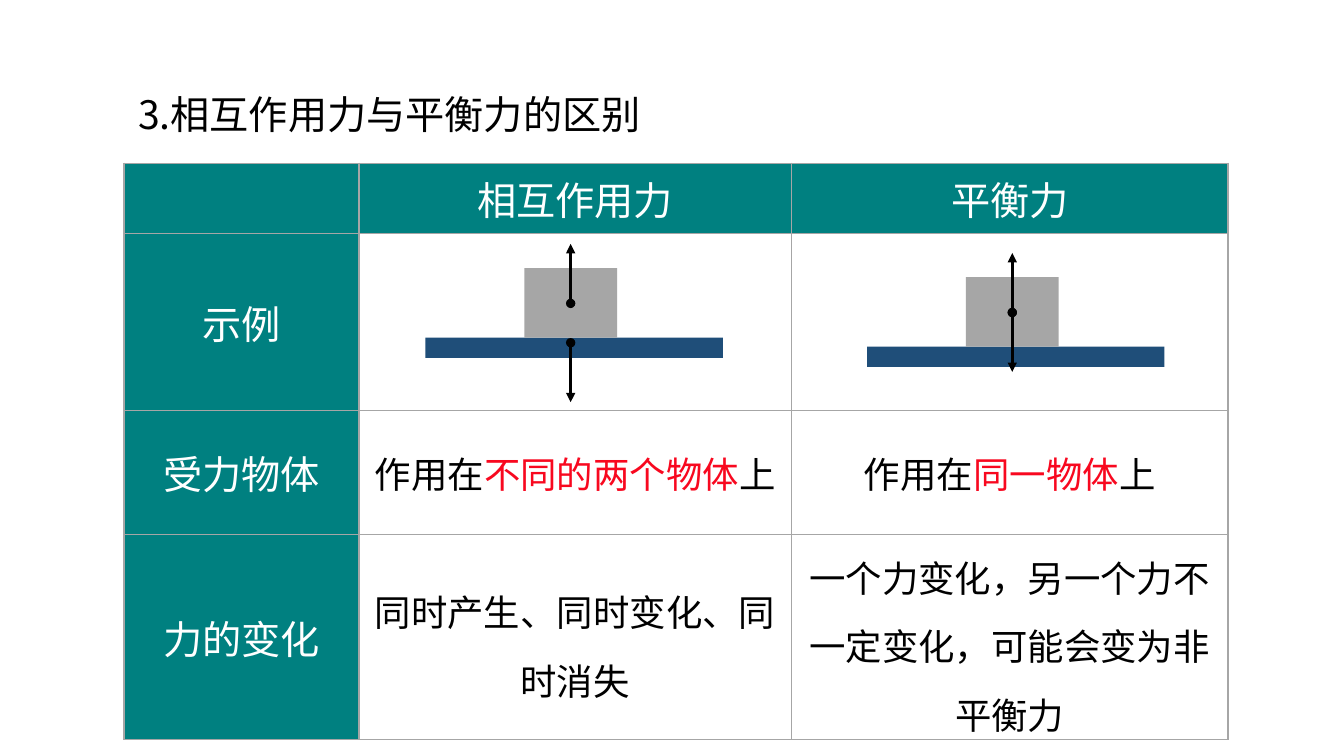
from lxml import etree
from pptx import Presentation
from pptx.dml.color import RGBColor
from pptx.enum.shapes import MSO_CONNECTOR, MSO_SHAPE
from pptx.enum.text import MSO_ANCHOR, MSO_AUTO_SIZE, PP_ALIGN
from pptx.oxml.ns import qn
from pptx.util import Inches, Pt

TEAL = RGBColor(0x00, 0x80, 0x80)
WHITE = RGBColor(0xFF, 0xFF, 0xFF)
BLACK = RGBColor(0x00, 0x00, 0x00)
RED = RGBColor(0xF8, 0x08, 0x1F)
GREY = RGBColor(0xA6, 0xA6, 0xA6)
NAVY = RGBColor(0x1F, 0x4E, 0x79)
FONT = "Noto Sans CJK SC"
RECT = MSO_SHAPE.RECTANGLE
LINE = MSO_CONNECTOR.STRAIGHT
CENTER = PP_ALIGN.CENTER
MIDDLE = MSO_ANCHOR.MIDDLE
GROW = MSO_AUTO_SIZE.SHAPE_TO_FIT_TEXT


def add_run(para, text, size, color):
    run = para.add_run()
    run.text = text
    run.font.size = Pt(size)
    run.font.color.rgb = color
    run.font.name = FONT
    props = run.font._element
    etree.SubElement(props, qn("a:ea")).set("typeface", FONT)


def add_edges(cell):
    props = cell._tc.get_or_add_tcPr()
    for spot, side in enumerate(("lnL", "lnR", "lnT", "lnB")):
        edge = etree.Element(qn("a:" + side), w=str(Pt(1)))
        fill = etree.SubElement(edge, qn("a:solidFill"))
        etree.SubElement(fill, qn("a:srgbClr")).set("val", str(GREY))
        props.insert(spot, edge)


prs = Presentation()
prs.slide_width, prs.slide_height = Inches(13.33), Inches(7.5)
slide = prs.slides.add_slide(prs.slide_layouts[6])

# Comparison table: each cell is a list of (text, colour) runs
WIDTHS = [2.33, 4.29, 4.33]
HEIGHTS = [0.7, 1.75, 1.23, 1.52]
ROWS = [
    [[], [("相互作用力", WHITE)], [("平衡力", WHITE)]],
    [[("示例", WHITE)], [], []],
    [[("受力物体", WHITE)],
     [("作用在", BLACK), ("不同的两个物体", RED), ("上", BLACK)],
     [("作用在", BLACK), ("同一物体", RED), ("上", BLACK)]],
    [[("力的变化", WHITE)],
     [("同时产生、同时变化、同时消失", BLACK)],
     [("一个力变化，另一个力不一定变化，可能会变为非平衡力", BLACK)]],
]
table = slide.shapes.add_table(
    len(ROWS), len(WIDTHS), Inches(1.23), Inches(1.62),
    Inches(sum(WIDTHS)), Inches(sum(HEIGHTS))).table
table.first_row = table.horz_banding = False
for col, width in zip(table.columns, WIDTHS):
    col.width = Inches(width)
for row, height in zip(table.rows, HEIGHTS):
    row.height = Inches(height)

for r, row in enumerate(ROWS):
    for c, parts in enumerate(row):
        cell = table.cell(r, c)
        head = r == 0 or c == 0
        if head:
            cell.fill.solid()
            cell.fill.fore_color.rgb = TEAL
        else:
            cell.fill.background()
        add_edges(cell)
        cell.vertical_anchor = MIDDLE
        cell.margin_left = cell.margin_right = 0
        cell.margin_top = cell.margin_bottom = 0
        para = cell.text_frame.paragraphs[0]
        para.alignment = CENTER
        if r == 3 and not head:
            para.line_spacing = 1.3
        for text, color in parts:
            add_run(para, text, 28 if head else 26, color)

# Title
title = slide.shapes.add_textbox(
    Inches(1.31), Inches(0.89), Inches(5.36), Inches(0.5))
frame = title.text_frame
frame.word_wrap = True
frame.auto_size = GROW
frame.margin_left = frame.margin_right = Inches(0.06)
frame.margin_top = frame.margin_bottom = Inches(0.01)
add_run(frame.paragraphs[0], "3.相互作用力与平衡力的区别", 28, BLACK)

# Force diagrams: left and top of the block, then start of the down arrow
for left, top, low in ((9.58, 2.75, 3.1), (5.2, 2.66, 3.4)):
    group = slide.shapes.add_group_shape()
    for x, y, width, height, color in (
            (left - 0.98, top + 0.69, 2.95, 0.2, NAVY),
            (left, top, 0.92, 0.69, GREY)):
        box = group.shapes.add_shape(
            RECT, Inches(x), Inches(y), Inches(width), Inches(height))
        box.shadow.inherit = False
        box.fill.solid()
        box.fill.fore_color.rgb = color
        box.line.fill.background()
    mid = Inches(left + 0.46)
    for start, reach in ((low, 0.59), (top + 0.35, -0.59)):
        arrow = group.shapes.add_connector(
            LINE, mid, Inches(start), mid, Inches(start + reach))
        arrow.line.color.rgb = BLACK
        arrow.line.width = Pt(2.25)
        line = arrow.line._get_or_add_ln()
        etree.SubElement(line, qn("a:headEnd")).set("type", "oval")
        etree.SubElement(line, qn("a:tailEnd")).set("type", "triangle")
        etree.SubElement(arrow._element.spPr, qn("a:effectLst"))

prs.save("out.pptx")
